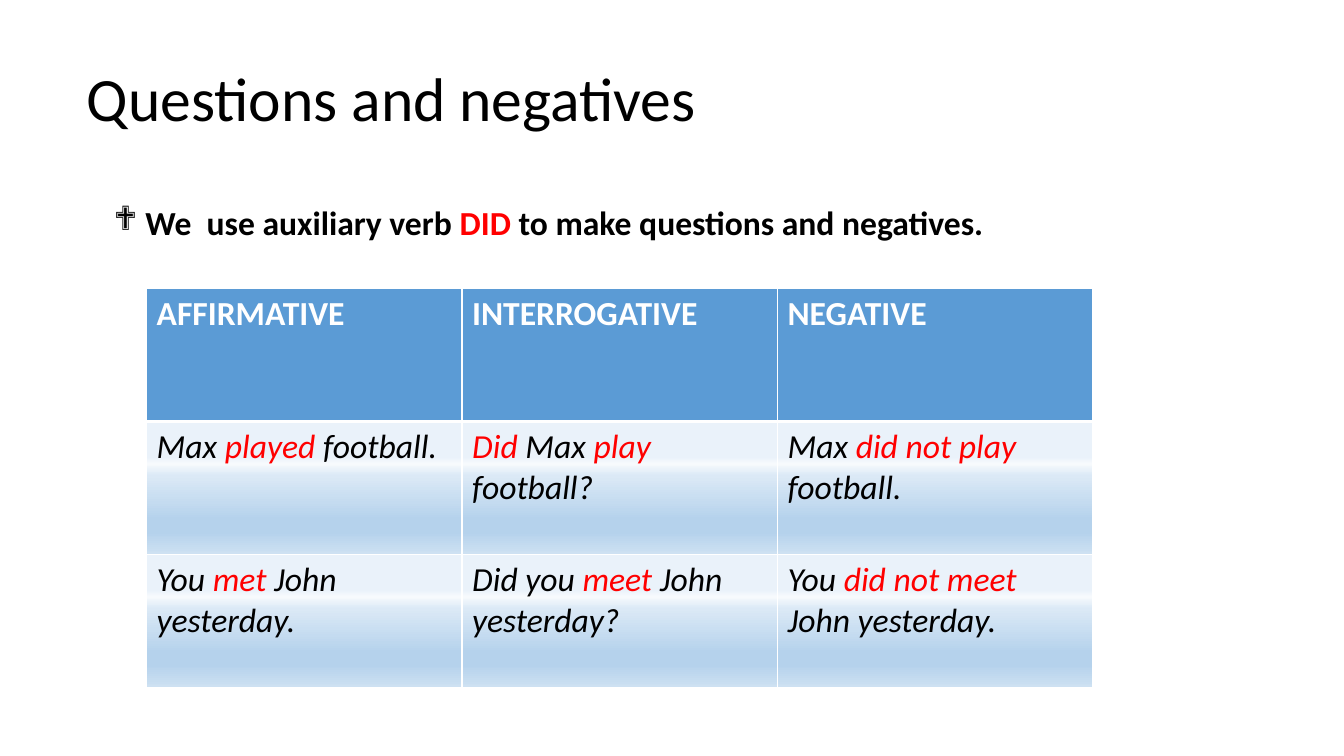
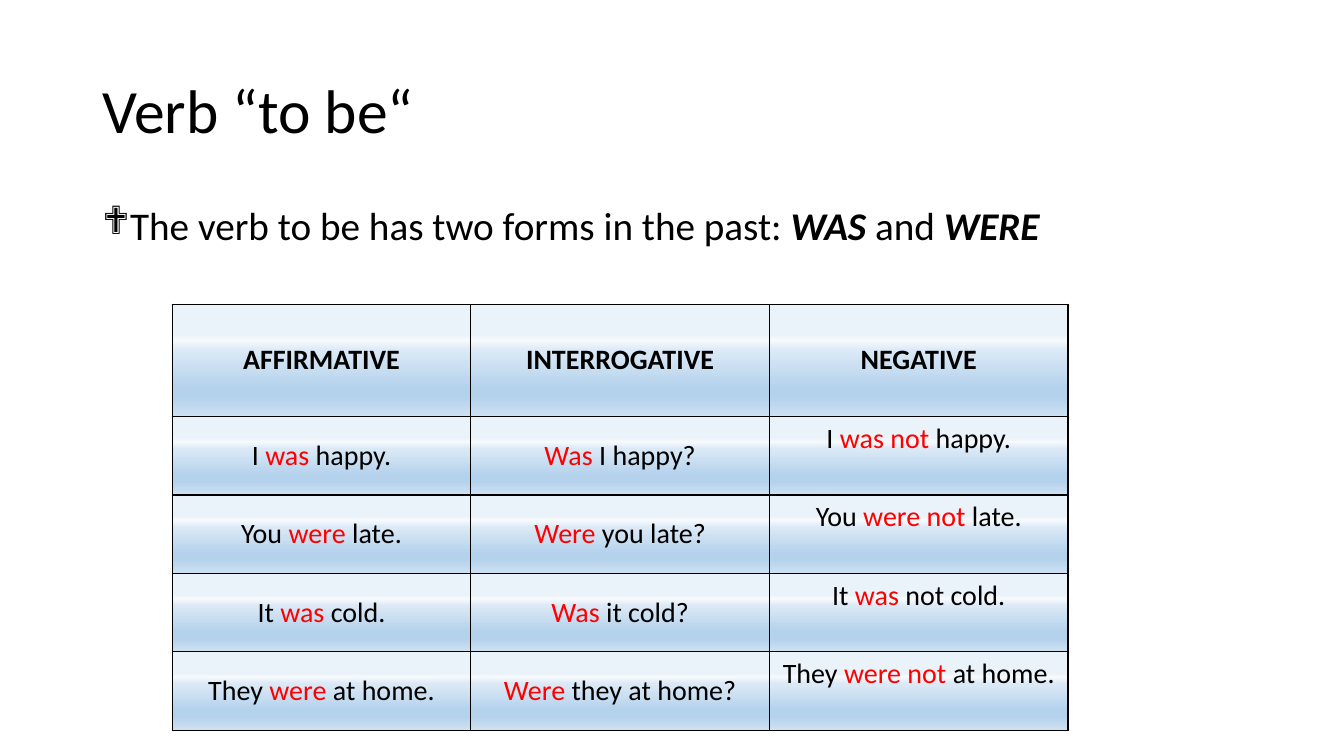
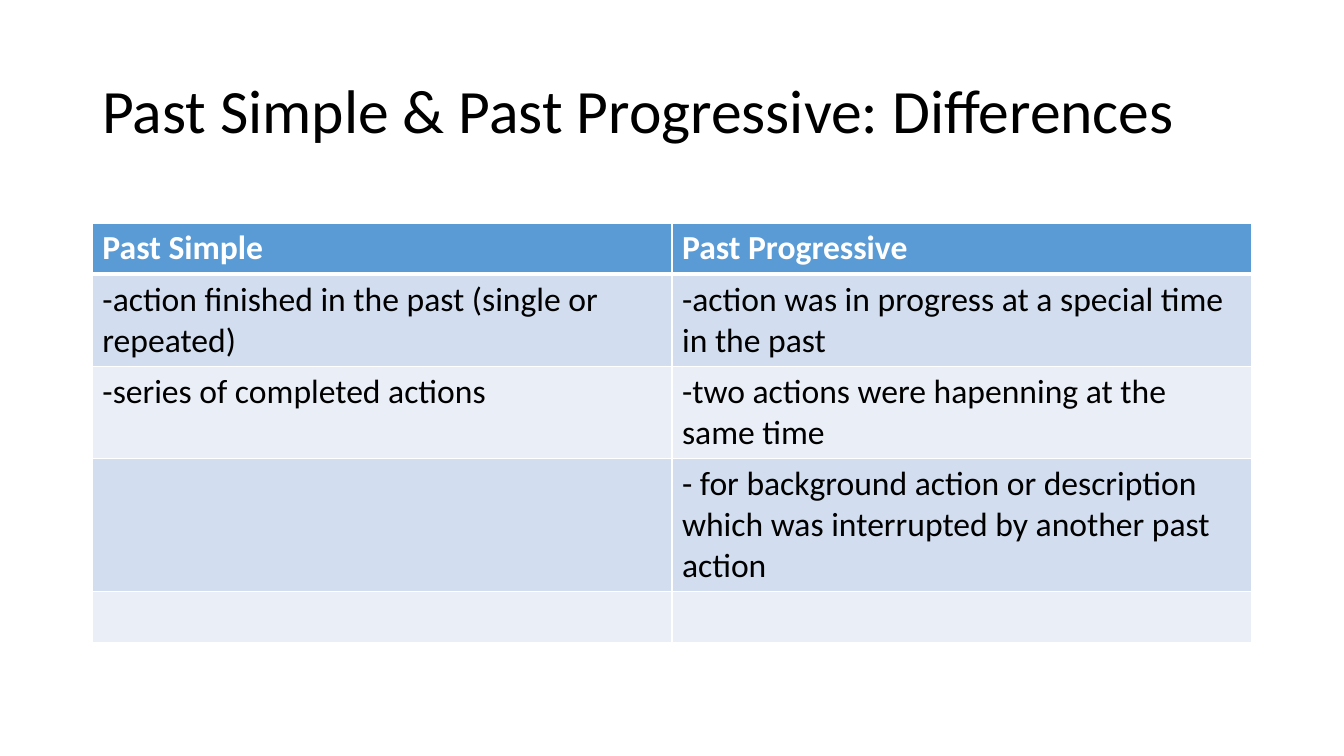
from pptx import Presentation
from pptx.dml.color import RGBColor
from pptx.enum.text import MSO_ANCHOR as Anchor, MSO_AUTO_SIZE as AutoSize, PP_ALIGN as Align
from pptx.oxml import parse_xml
from pptx.oxml.ns import nsdecls
from pptx.util import Pt

BLACK, WHITE, RED, BLUE = "000000", "FFFFFF", "FF0000", "5B9BD5"
BANDS = ("D2DEEF", "EAEFF7")
GLOSS = ((27, "EAF2FA"), (32, "F7FAFD"), (41, "DBE9F6"), (74, "B5D2EC"), (83, "B5D2EC"), (100, "CEE1F2"))


def color(value):
    return RGBColor.from_string(value)


class Deck:
    """Holds the lesson style and the slide being built."""

    font = "Calibri"
    line_factor = 1.22

    def __init__(self):
        self.presentation = Presentation()
        self.presentation.slide_width = Pt(960)
        self.presentation.slide_height = Pt(540)
        self.slide = None

    def add_slide(self, title, left=66, top=28.75):
        self.slide = self.presentation.slides.add_slide(self.presentation.slide_layouts[5])
        shape = self.slide.shapes.title
        shape.left, shape.top, shape.width, shape.height = Pt(left), Pt(top), Pt(828), Pt(104.4)
        text_frame = shape.text_frame
        text_frame.auto_size = AutoSize.NONE
        text_frame.vertical_anchor = Anchor.MIDDLE
        paragraph = text_frame.paragraphs[0]
        paragraph.alignment = Align.LEFT
        paragraph.line_spacing = 0.9
        self.add_runs(paragraph, title, 44)

    def add_runs(self, paragraph, text, size, ink=BLACK, bold=False, italic=False, accent=RED, strong=False):
        """Adds text whose parts between bars are highlighted."""
        for index, part in enumerate(text.split("|")):
            if not part:
                continue
            marked = index % 2 == 1
            run = paragraph.add_run()
            run.text = part
            font = run.font
            font.name, font.size = self.font, Pt(size)
            font.bold = bold or (marked and strong)
            font.italic = italic or (marked and strong)
            font.color.rgb = color(accent if marked else ink)

    def add_bullet(self, text, left, size, indent, bullet_size, **style):
        shape = self.slide.shapes.add_textbox(Pt(left), Pt(144), Pt(828), Pt(45))
        shape.text_frame.word_wrap = True
        paragraph = shape.text_frame.paragraphs[0]
        paragraph.line_spacing = 0.9
        properties = paragraph._p.get_or_add_pPr()
        properties.set("marL", str(Pt(indent)))
        properties.set("indent", str(-Pt(indent)))
        for element in (f'buSzPts {nsdecls("a")} val="{bullet_size * 100}"',
                        f'buFont {nsdecls("a")} typeface="Wingdings"',
                        f'buChar {nsdecls("a")} char="❖"'):
            properties.append(parse_xml(f"<a:{element}/>"))
        self.add_runs(paragraph, text, size, **style)

    def add_table(self, rows, line_counts, left, top, width, size, fill, edge=WHITE, centered=False,
                  header_fill=BLUE, header_ink=WHITE, header_rule=3, italic=False):
        heights = [Pt(round(count * size * self.line_factor + 7.2, 1)) for count in line_counts]
        column_count = len(rows[0])
        table = self.slide.shapes.add_table(len(rows), column_count, Pt(left), Pt(top),
                                            Pt(width), sum(heights)).table
        table.first_row = table.horz_banding = False
        for row, height in zip(table.rows, heights):
            row.height = height
        for row_index, texts in enumerate(rows):
            header = row_index == 0
            for column_index, text in enumerate(texts):
                cell = table.cell(row_index, column_index)
                self.paint(cell, header_fill if header else fill(row_index))
                self.rule(cell, edge, top=header_rule if row_index == 1 else 1,
                          bottom=header_rule if header else 1)
                paragraph = cell.text_frame.paragraphs[0]
                if centered:
                    paragraph.alignment = Align.CENTER
                    raised = not header and column_index == column_count - 1
                    cell.vertical_anchor = Anchor.TOP if raised else Anchor.MIDDLE
                self.add_runs(paragraph, text, size, header_ink if header else BLACK,
                              bold=header, italic=italic and not header)

    def paint(self, cell, fill):
        if isinstance(fill, str):
            cell.fill.solid()
            cell.fill.fore_color.rgb = color(fill)
            return
        stops = "".join(f'<a:gs pos="{position * 1000}"><a:srgbClr val="{value}"/></a:gs>'
                        for position, value in fill)
        cell._tc.get_or_add_tcPr().append(parse_xml(
            f'<a:gradFill {nsdecls("a")}><a:gsLst>{stops}</a:gsLst>'
            '<a:lin ang="5400000" scaled="0"/></a:gradFill>'))

    def rule(self, cell, edge, top, bottom):
        properties = cell._tc.get_or_add_tcPr()
        for index, (side, width) in enumerate(zip("LRTB", (1, 1, top, bottom))):
            properties.insert(index, parse_xml(
                f'<a:ln{side} {nsdecls("a")} w="{Pt(width)}"><a:solidFill>'
                f'<a:srgbClr val="{edge}"/></a:solidFill></a:ln{side}>'))


def main():
    deck = Deck()
    forms = ("AFFIRMATIVE", "INTERROGATIVE", "NEGATIVE")

    deck.add_slide("Questions and negatives", left=54.75, top=20.25)
    deck.add_bullet("We  use auxiliary verb |DID| to make questions and negatives.",
                    left=74.25, size=24, indent=22.5, bullet_size=20, bold=True)
    deck.add_table([
        forms,
        ("Max |played| football.", "|Did| Max |play| football?", "Max |did not play| football."),
        ("You |met| John yesterday.", "Did you |meet| John yesterday?", "You |did not meet| John yesterday."),
    ], (3, 3, 3), left=104.75, top=206, width=676, size=24, fill=lambda row: GLOSS, italic=True)

    deck.add_slide("Verb “to be“")
    deck.add_bullet("The verb to be has two forms in the past: |WAS| and |WERE|",
                    left=66, size=28, indent=18, bullet_size=28, accent=BLACK, strong=True)
    deck.add_table([
        forms,
        ("I |was| happy.", "|Was| I happy?", "I |was not| happy."),
        ("You |were| late.", "|Were| you late?", "You |were not| late."),
        ("It |was| cold.", "|Was| it cold?", "It |was| not cold."),
        ("They |were| at home.", "|Were| they at home?", "They |were not| at home."),
    ], (3, 2, 2, 2, 2), left=123, top=217.25, width=640, size=20, fill=lambda row: GLOSS, edge=BLACK,
        centered=True, header_fill=GLOSS, header_ink=BLACK, header_rule=1)

    deck.add_slide("Past Simple & Past Progressive: Differences")
    deck.add_table([
        ("Past Simple", "Past Progressive"),
        ("-action finished in the past (single or repeated)",
         "-action was in progress at a special time in the past"),
        ("-series of completed actions", "-two actions were hapenning at the same time"),
        ("", "- for background action or description which was interrupted by another past action"),
        ("", ""),
    ], (1, 2, 2, 3, 1), left=66, top=159.25, width=828, size=24,
        fill=lambda row: BANDS[(row - 1) % 2])

    deck.presentation.save("out.pptx")


if __name__ == "__main__":
    main()
